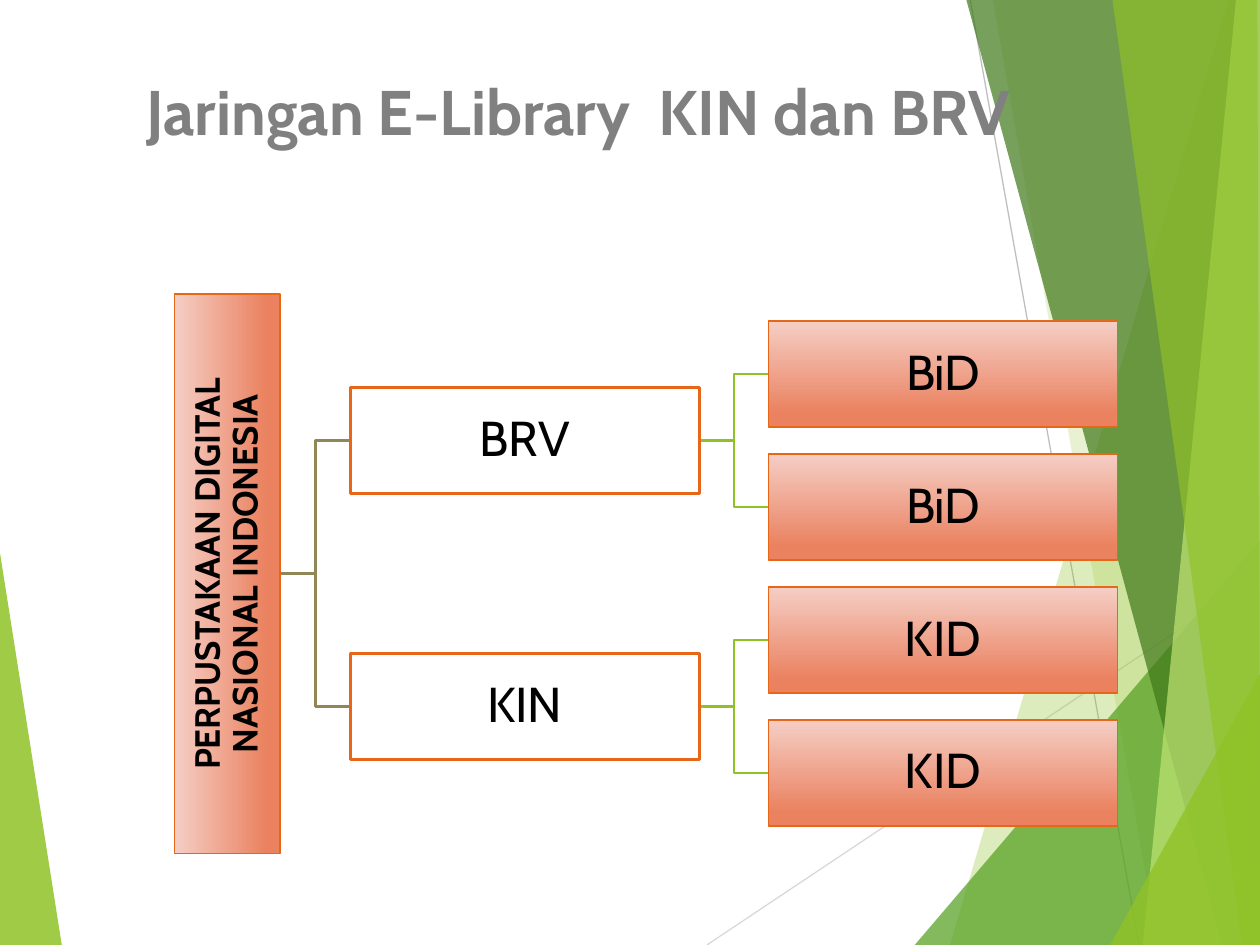
from dataclasses import dataclass

from pptx import Presentation, util as u
from pptx.dml.color import RGBColor
from pptx.enum import shapes, text
from pptx.oxml import parse_xml
from pptx.oxml.ns import nsdecls, qn
from pptx.shapes.autoshape import Shape
from pptx.slide import Slide

Point = tuple[float, float]


@dataclass(frozen=True)
class Theme:
    font: str = "Cabin"
    lime: str = "90C226"
    green: str = "54A021"
    forest: str = "3F7819"
    pale: str = "C0E474"
    olive: str = "918655"
    orange: str = "E76618"
    blush: str = "F5CEC5"
    coral: str = "EA815F"
    white: str = "FFFFFF"
    ink: str = "000000"
    heading: str = "808080"
    silver: str = "BFBFBF"
    mist: str = "D9D9D9"
    title_size: float = 36
    node_size: float = 28
    root_size: float = 20


@dataclass(frozen=True)
class Grid:
    width: int = u.Inches(10)
    height: int = u.Inches(7.5)
    first_column: float = 41.65
    column_step: float = 33.2
    first_row: float = 39.6
    row_step: float = 14.07
    box_width: float = 27.7
    box_height: float = 11.2
    gap: float = 5.5
    root_x: float = 18.05
    root_length: float = 44.4

    def across(self, percent: float) -> int:
        return round(self.width * percent / 100)

    def down(self, percent: float) -> int:
        return round(self.height * percent / 100)

    def column(self, index: float) -> float:
        return self.first_column + index * self.column_step

    def row(self, index: float) -> float:
        return self.first_row + index * self.row_step


@dataclass(frozen=True)
class Facet:
    color: str
    opacity: int
    points: list[Point]


@dataclass(frozen=True)
class Ray:
    color: str
    start: Point
    end: Point


@dataclass(frozen=True)
class Node:
    label: str
    column: int
    row: float
    parent_row: float
    shaded: bool
    link_color: str


THEME = Theme()
GRID = Grid()

DECOR = [
    Facet(THEME.lime, 85, [(0, 58.53), (4.9, 100), (0, 100)]),
    Ray(THEME.mist, (56.1, 100), (100, 60.93)),
    Ray(THEME.silver, (77, 0), (90.4, 100)),
    Facet(THEME.lime, 30, [(97.5, 0), (75.4, 100), (100, 100), (100, 0)]),
    Facet(THEME.lime, 20, [(78.8, 0), (91.9, 100), (100, 100), (100, 0)]),
    Facet(THEME.green, 72, [(72.6, 100), (100, 57.2), (100, 100)]),
    Facet(THEME.forest, 70, [(76.7, 0), (97, 100), (100, 100), (100, 0)]),
    Facet(THEME.pale, 70, [(98.1, 0), (90.7, 100), (100, 100), (100, 0)]),
    Facet(THEME.lime, 65, [(88.3, 0), (98.6, 100), (100, 100), (99.8, 0)]),
    Facet(THEME.lime, 80, [(88.1, 100), (100, 71.33), (100, 100)]),
]

NODES = [
    Node("BRV", 0, 0.5, 1.5, False, THEME.olive),
    Node("KIN", 0, 2.5, 1.5, False, THEME.olive),
    Node("BiD", 1, 0, 0.5, True, THEME.lime),
    Node("BiD", 1, 1, 0.5, True, THEME.lime),
    Node("KID", 1, 2, 2.5, True, THEME.lime),
    Node("KID", 1, 3, 2.5, True, THEME.lime),
]


def rgb(color: str) -> RGBColor:
    """Turn a hex code into a colour."""
    return RGBColor.from_string(color)


def add_path(page: Slide, points: list[Point], close: bool) -> Shape:
    """Build an outline through points given as shares of the slide."""
    spots = [(GRID.across(x), GRID.down(y)) for x, y in points]
    builder = page.shapes.build_freeform(*spots[0])
    builder.add_line_segments(spots[1:], close=close)
    outline = builder.convert_to_shape()
    outline.shadow.inherit = False
    return outline


def add_facet(page: Slide, facet: Facet) -> None:
    """Draw one translucent background facet."""
    outline = add_path(page, facet.points, True)
    outline.fill.solid()
    outline.fill.fore_color.rgb = rgb(facet.color)
    outline.line.fill.background()
    color = outline.element.spPr.find(qn("a:solidFill"))[0]
    color.append(parse_xml(f'<a:alpha {nsdecls("a")} val="{facet.opacity * 1000}"/>'))


def add_ray(page: Slide, ray: Ray) -> None:
    """Draw one thin background line."""
    ends = [f(v) for point in (ray.start, ray.end)
            for f, v in zip((GRID.across, GRID.down), point)]
    line = page.shapes.add_connector(shapes.MSO_CONNECTOR.STRAIGHT, *ends)
    line.line.color.rgb = rgb(ray.color)
    line.line.width = u.Pt(0.75)
    line.element.spPr.append(parse_xml(f'<a:effectLst {nsdecls("a")}/>'))


def add_span(para, wording: str, size: float, color: str, bold: bool) -> None:
    """Add one formatted run."""
    span = para.add_run()
    span.text = wording
    span.font.name = THEME.font
    span.font.size = u.Pt(size)
    span.font.bold = bold
    span.font.color.rgb = rgb(color)


def add_box(page: Slide, label: str, center: Point, width: float, shaded: bool,
            size: float, bold: bool = False) -> Shape:
    """Draw a labelled box around its centre."""
    wide, high = GRID.across(width), GRID.down(GRID.box_height)
    left = GRID.across(center[0]) - wide // 2
    top = GRID.down(center[1]) - high // 2
    box = page.shapes.add_shape(shapes.MSO_SHAPE.RECTANGLE, left, top, wide, high)
    box.shadow.inherit = False
    if shaded:
        box.fill.gradient()
        box.fill.gradient_angle = 270
        stops = zip(box.fill.gradient_stops, (0, 0.88), (THEME.blush, THEME.coral))
        for stop, position, color in stops:
            stop.position = position
            stop.color.rgb = rgb(color)
    else:
        box.fill.solid()
        box.fill.fore_color.rgb = rgb(THEME.white)
    box.line.color.rgb = rgb(THEME.orange)
    box.line.width = u.Pt(1 if shaded else 1.5)
    frame = box.text_frame
    frame.word_wrap = True
    frame.vertical_anchor = text.MSO_ANCHOR.MIDDLE
    frame.margin_left = frame.margin_right = u.Inches(0.02)
    frame.margin_top = frame.margin_bottom = u.Inches(0.02)
    para = frame.paragraphs[0]
    para.alignment = text.PP_ALIGN.CENTER
    para.line_spacing = 0.9
    add_span(para, label, size, THEME.ink, bold)
    return box


def add_link(page: Slide, node: Node) -> None:
    """Draw the elbow from a parent box to a node."""
    end = GRID.column(node.column) - GRID.box_width / 2
    start, bend = end - GRID.gap, end - GRID.gap / 2
    high, low = GRID.row(node.parent_row), GRID.row(node.row)
    elbow = add_path(page, [(start, high), (bend, high), (bend, low), (end, low)], False)
    elbow.fill.background()
    elbow.line.color.rgb = rgb(node.link_color)
    elbow.line.width = u.Pt(1.5)


def set_title(page: Slide, wording: str) -> None:
    """Place and format the title in front of the background."""
    title = page.shapes.title
    title.left, title.top = GRID.across(10.6), GRID.down(6.93)
    title.width, title.height = GRID.across(81.3), GRID.down(9.47)
    frame = title.text_frame
    frame.word_wrap = True
    frame.auto_size = text.MSO_AUTO_SIZE.NONE
    frame.vertical_anchor = text.MSO_ANCHOR.MIDDLE
    para = frame.paragraphs[0]
    para.alignment = text.PP_ALIGN.LEFT
    add_span(para, wording, THEME.title_size, THEME.heading, True)
    page.shapes.element.append(title.element)


def main() -> None:
    """Build the slide and save the deck."""
    deck = Presentation()
    deck.slide_width, deck.slide_height = GRID.width, GRID.height
    page = deck.slides.add_slide(deck.slide_layouts[5])
    for item in DECOR:
        (add_facet if isinstance(item, Facet) else add_ray)(page, item)
    set_title(page, "Jaringan E-Library  KIN dan BRV")
    for node in NODES:
        add_link(page, node)
    root = add_box(page, "PERPUSTAKAAN DIGITAL NASIONAL INDONESIA",
                   (GRID.root_x, GRID.row(1.5)), GRID.root_length, True,
                   THEME.root_size, True)
    root.rotation = 270
    for node in NODES:
        add_box(page, node.label, (GRID.column(node.column), GRID.row(node.row)),
                GRID.box_width, node.shaded, THEME.node_size)
    deck.save("out.pptx")


if __name__ == "__main__":
    main()
